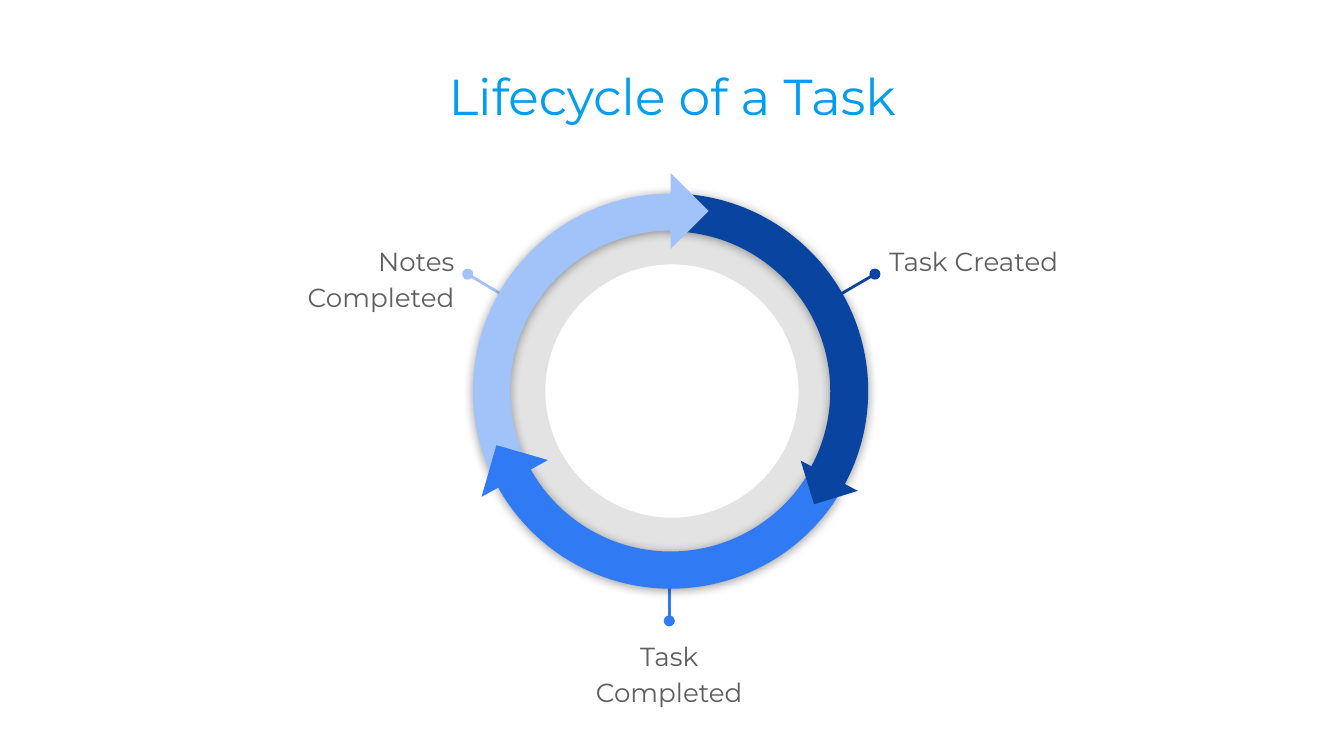
import dataclasses

import lxml.etree
import pptx
import pptx.dml.color
import pptx.enum.shapes
import pptx.enum.text
import pptx.oxml.ns
import pptx.util

Inches = pptx.util.Inches
Shape = pptx.enum.shapes.MSO_SHAPE
Align = pptx.enum.text.PP_ALIGN
Anchor = pptx.enum.text.MSO_ANCHOR
qn = pptx.oxml.ns.qn


@dataclasses.dataclass(frozen=True)
class Theme:
    font: str = "Montserrat"
    title: str = "009DF1"
    label: str = "5E5E5E"
    created: str = "0944A1"
    completed: str = "307BF3"
    notes: str = "A1C3FA"
    black: str = "000000"
    title_size: float = 27
    label_size: float = 14
    line_width: float = 1.5


def add_xml(parent, tag, **attributes):
    names = {name: str(value) for name, value in attributes.items()}
    return lxml.etree.SubElement(parent, qn(tag), names)


class CycleSlide:
    def __init__(self, page, theme):
        self.page = page
        self.theme = theme

    def text(self, place, words, size, color, align, spacing, insets, anchor=Anchor.TOP):
        box = self.page.shapes.add_textbox(*map(Inches, place))
        frame = box.text_frame
        frame.word_wrap = True
        frame.vertical_anchor = anchor
        frame.margin_left = frame.margin_right = Inches(insets[0])
        frame.margin_top = frame.margin_bottom = Inches(insets[1])
        para = frame.paragraphs[0]
        para.alignment = align
        para.line_spacing = spacing
        span = para.add_run()
        span.text = words
        span.font.name = self.theme.font
        span.font.size = pptx.util.Pt(size)
        span.font.color.rgb = pptx.dml.color.RGBColor.from_string(color)

    def label(self, left, top, words, align):
        self.text((left, top, 1.64, 0.73), words, self.theme.label_size,
                  self.theme.label, align, 1.15, (0.1, 0.1))

    def shape(self, kind, place, color, turn=0, adjustments=(), flip=False):
        shape = self.page.shapes.add_shape(kind, *map(Inches, place))
        for index, value in enumerate(adjustments):
            shape.adjustments[index] = value
        shape.rotation = turn
        shape.shadow.inherit = False
        shape.fill.solid()
        shape.fill.fore_color.rgb = pptx.dml.color.RGBColor.from_string(color)
        shape.line.fill.background()
        if flip:
            shape.element.spPr.find(qn("a:xfrm")).set("flipH", "1")
        return shape

    def ring(self, place, thickness, opacity):
        ring = self.shape(Shape.DONUT, place, self.theme.black, adjustments=[thickness])
        color = ring.element.spPr.find(qn("a:solidFill")).find(qn("a:srgbClr"))
        add_xml(color, "a:alpha", val=opacity * 1000)

    def arc(self, color, turn, adjustments, flip=False):
        arc = self.shape(Shape.BLOCK_ARC, (3.52, 1.44, 2.94, 2.94), color,
                         turn, adjustments, flip)
        effects = arc.element.spPr.find(qn("a:effectLst"))
        shadow = add_xml(effects, "a:outerShdw", blurRad=pptx.util.Pt(5.6),
                         dist=pptx.util.Pt(0.8), dir=90 * 60000,
                         algn="bl", rotWithShape=0)
        shade = add_xml(shadow, "a:srgbClr", val=self.theme.black)
        add_xml(shade, "a:alpha", val=40000)

    def arrowhead(self, left, top, side, color, turn):
        self.shape(Shape.RIGHT_TRIANGLE, (left, top, side, side), color, turn)

    def pointer(self, start, end, color):
        line = self.page.shapes.add_connector(
            pptx.enum.shapes.MSO_CONNECTOR.STRAIGHT, *map(Inches, start + end))
        line.line.width = pptx.util.Pt(self.theme.line_width)
        line.line.color.rgb = pptx.dml.color.RGBColor.from_string(color)
        properties = line.element.spPr
        add_xml(properties.find(qn("a:ln")), "a:headEnd", type="oval", w="med", len="med")
        add_xml(properties, "a:effectLst")


def main():
    # Widescreen page, 16 to 9
    deck = pptx.Presentation()
    deck.slide_width = Inches(10)
    deck.slide_height = Inches(10 * 9 / 16)
    theme = Theme()
    slide = CycleSlide(deck.slides.add_slide(deck.slide_layouts[6]), theme)

    # Title
    slide.text((0.69, 0.3, 8.62, 0.88), "Lifecycle of a Task", theme.title_size,
               theme.title, Align.CENTER, 0.9, (0.07, 0.04), Anchor.MIDDLE)

    # Grey ring behind the cycle
    slide.ring((3.61, 1.52, 2.78, 2.78), 0.161, 11)

    # Stage labels with their pointers
    stages = [
        ("Notes Completed", 1.84, 1.69, Align.RIGHT, (3.48, 2.04), (3.95, 2.32), theme.notes),
        ("Task Created", 6.52, 1.69, Align.LEFT, (6.51, 2.04), (6.03, 2.32), theme.created),
        ("Task Completed", 4.16, 4.63, Align.CENTER, (4.98, 4.62), (4.98, 4.12), theme.completed),
    ]
    for words, left, top, align, start, end, color in stages:
        slide.pointer(start, end, color)
        slide.label(left, top, words, align)

    # Cycle arcs and arrowheads, each overlapping the next stage
    slide.arc(theme.created, 30, (144.144, 0.007, 0.096))
    slide.arc(theme.notes, 330, (143.486, 214.729, 0.094), flip=True)
    slide.arrowhead(4.79, 1.37, 0.4, theme.notes, 225)
    slide.arc(theme.completed, 210, (143.162, 215.027, 0.094), flip=True)
    slide.arrowhead(6, 3.37, 0.34, theme.created, 342.9)
    slide.arrowhead(3.63, 3.36, 0.4, theme.completed, 106)

    deck.save("out.pptx")


if __name__ == "__main__":
    main()
